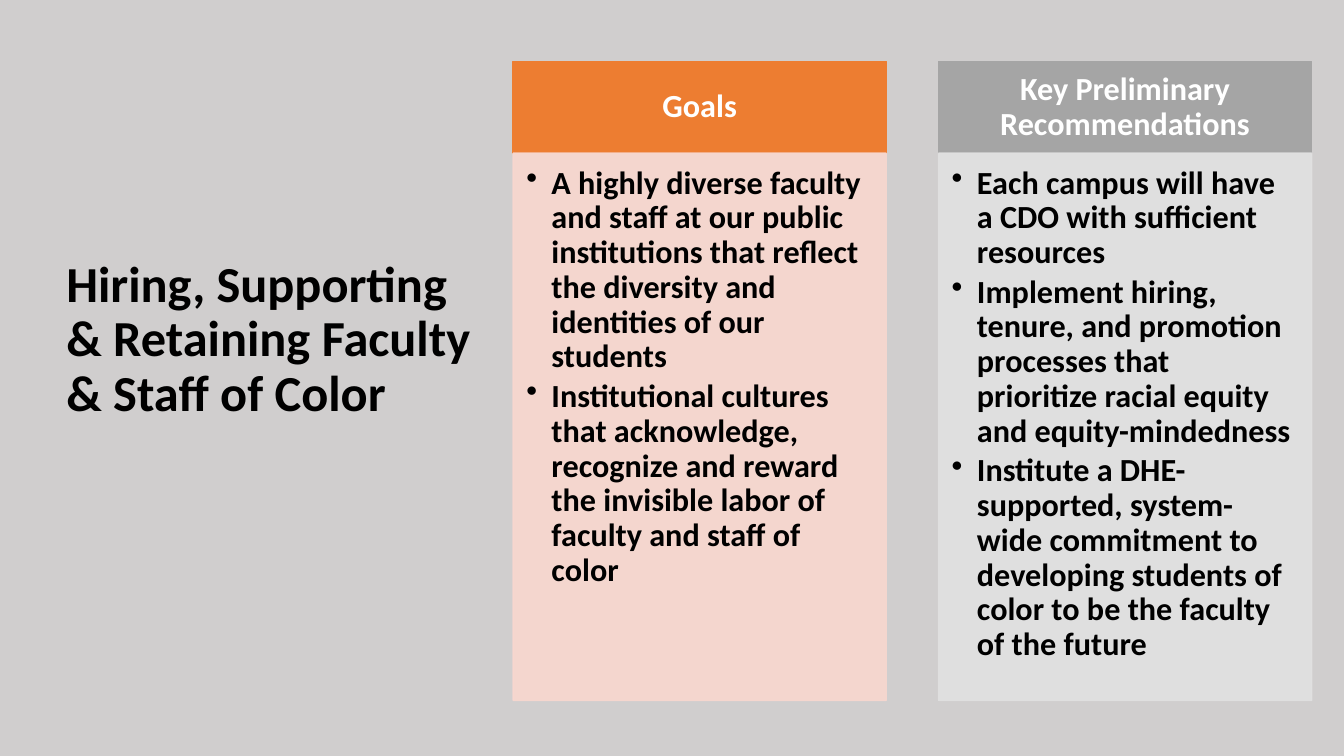
from lxml import etree
from pptx import Presentation
from pptx.dml.color import RGBColor
from pptx.enum.shapes import MSO_SHAPE
from pptx.enum.text import MSO_ANCHOR, PP_ALIGN
from pptx.oxml.ns import qn
from pptx.util import Inches, Pt

RECTANGLE = MSO_SHAPE.RECTANGLE
TOP, MIDDLE, BOTTOM = MSO_ANCHOR.TOP, MSO_ANCHOR.MIDDLE, MSO_ANCHOR.BOTTOM
LEFT, CENTER = PP_ALIGN.LEFT, PP_ALIGN.CENTER

COLORS = {
    "background": "D0CECE",
    "dark": "000000",
    "light": "FFFFFF",
    "goals": "ED7D31",
    "goals_tint": "F8D7CE",
    "recommendations": "A5A5A5",
    "recommendations_tint": "E1E1E1",
}
TITLE = "Hiring, Supporting\v& Retaining Faculty & Staff of Color"
COLUMNS = [
    ("Goals", "goals", [
        "A highly diverse faculty and staff at our public institutions that reflect "
        "the diversity and identities of our students",
        "Institutional cultures that acknowledge, recognize and reward the invisible "
        "labor of faculty and staff of color",
    ]),
    ("Key Preliminary Recommendations", "recommendations", [
        "Each campus will have a CDO with sufficient resources",
        "Implement hiring, tenure, and promotion processes that prioritize racial "
        "equity and equity-mindedness",
        "Institute a DHE-supported, system-wide commitment to developing students of "
        "color to be the faculty of the future",
    ]),
]
FIRST_LEFT, COLUMN_STEP, COLUMN_WIDTH = 5.09, 4.22, 3.7
HEADING_TOP, HEADING_HEIGHT, BODY_HEIGHT = 0.61, 0.91, 5.43


def color(name):
    return RGBColor.from_string(COLORS[name])


def set_attributes(target, values):
    for key, value in values.items():
        setattr(target, key, value)


def write_paragraphs(shape, texts, size, ink, align, anchor, insets):
    frame = shape.text_frame
    sides = ("margin_left", "margin_top", "margin_right", "margin_bottom")
    margins = {side: Inches(inset) for side, inset in zip(sides, insets)}
    set_attributes(frame, {"word_wrap": True, "vertical_anchor": anchor, **margins})
    frame.text = "\n".join(texts)
    for paragraph in frame.paragraphs:
        set_attributes(paragraph, {"alignment": align, "line_spacing": 0.9})
        for run in paragraph.runs:
            set_attributes(run.font, {"name": "Calibri", "size": Pt(size), "bold": True})
            run.font.color.rgb = color(ink)
    return frame.paragraphs


def add_bullet(paragraph):
    paragraph.space_after = Pt(3.45)
    properties = paragraph._p.get_or_add_pPr()
    properties.set("marL", str(Inches(0.25)))
    properties.set("indent", str(-Inches(0.25)))
    etree.SubElement(properties, qn("a:buChar")).set("char", "•")


def add_panel(slide, left, top, height, fill):
    panel = slide.shapes.add_shape(
        RECTANGLE, Inches(left), Inches(top), Inches(COLUMN_WIDTH), Inches(height))
    panel.shadow.inherit = False
    panel.fill.solid()
    panel.fill.fore_color.rgb = color(fill)
    panel.line.color.rgb = color(fill)
    panel.line.width = Pt(1)
    return panel


def make_translucent(panel, percent):
    for tone in panel._element.spPr.iter(qn("a:srgbClr")):
        etree.SubElement(tone, qn("a:alpha")).set("val", str(percent * 1000))


def add_column(slide, left, heading, tone, points):
    header = add_panel(slide, left, HEADING_TOP, HEADING_HEIGHT, tone)
    write_paragraphs(header, [heading], 23, "light", CENTER, MIDDLE, (0.18, 0.1, 0.18, 0.1))
    body = add_panel(slide, left, HEADING_TOP + HEADING_HEIGHT, BODY_HEIGHT, tone + "_tint")
    make_translucent(body, 90)
    for paragraph in write_paragraphs(
            body, points, 23, "dark", LEFT, TOP, (0.13, 0.13, 0.18, 0.2)):
        add_bullet(paragraph)


def add_title(slide):
    title = slide.shapes.add_textbox(Inches(0.56), Inches(0.5), Inches(4.66), Inches(4.17))
    write_paragraphs(title, [TITLE], 36, "dark", LEFT, BOTTOM, (0.1, 0.05, 0.2, 0.48))


def main():
    deck = Presentation()
    deck.slide_width, deck.slide_height = Inches(13.33), Inches(7.5)
    slide = deck.slides.add_slide(deck.slide_layouts[6])
    slide.background.fill.solid()
    slide.background.fill.fore_color.rgb = color("background")
    add_title(slide)
    for index, (heading, tone, points) in enumerate(COLUMNS):
        add_column(slide, FIRST_LEFT + index * COLUMN_STEP, heading, tone, points)
    deck.save("out.pptx")


if __name__ == "__main__":
    main()
